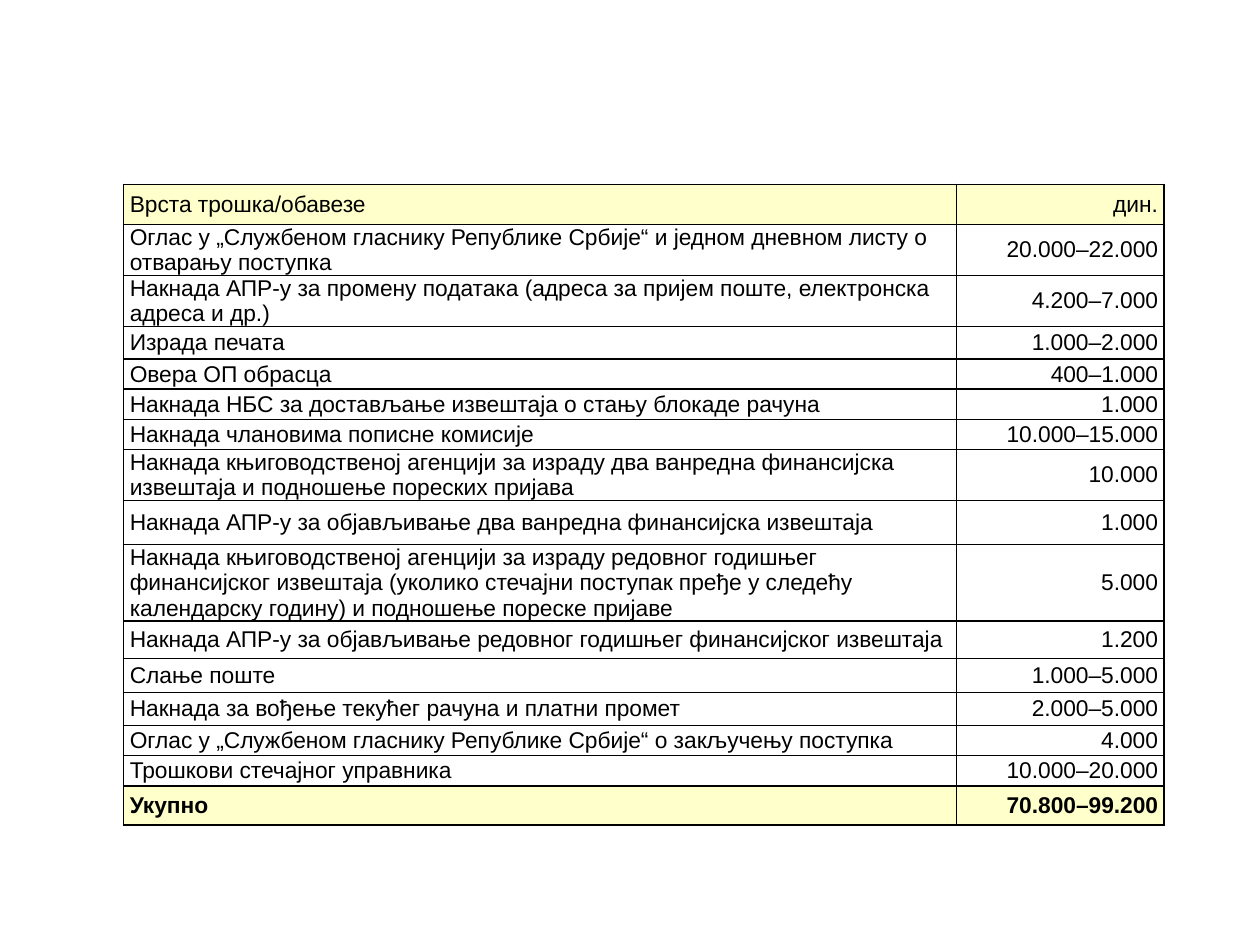
from dataclasses import dataclass, field

from lxml.etree import SubElement
from pptx import Presentation
from pptx.dml.color import RGBColor
from pptx.enum.text import MSO_ANCHOR, PP_ALIGN
from pptx.oxml.ns import qn
from pptx.util import Inches, Pt

COLORS = {"ink": "000000", "band": "FFFFCC", "paper": "FFFFFF"}
COSTS = [
    ("Врста трошка/обавезе", "дин.", 0.32),
    ("Оглас у „Службеном гласнику Републике Србије“ и једном дневном листу о отварању поступка",
     "20.000–22.000", 0.35),
    ("Накнада АПР-у за промену података (адреса за пријем поште, електронска адреса и др.)",
     "4.200–7.000", 0.35),
    ("Израда печата", "1.000–2.000", 0.26),
    ("Овера ОП обрасца", "400–1.000", 0.24),
    ("Накнада НБС за достављање извештаја о стању блокаде рачуна", "1.000", 0.24),
    ("Накнада члановима пописне комисије", "10.000–15.000", 0.24),
    ("Накнада књиговодственој агенцији за израду два ванредна финансијска извештаја "
     "и подношење пореских пријава", "10.000", 0.35),
    ("Накнада АПР-у за објављивање два ванредна финансијска извештаја", "1.000", 0.35),
    ("Накнада књиговодственој агенцији за израду редовног годишњег финансијског извештаја "
     "(уколико стечајни поступак пређе у следећу календарску годину) и подношење пореске пријаве",
     "5.000", 0.52),
    ("Накнада АПР-у за објављивање редовног годишњег финансијског извештаја", "1.200", 0.3),
    ("Слање поште", "1.000–5.000", 0.27),
    ("Накнада за вођење текућег рачуна и платни промет", "2.000–5.000", 0.26),
    ("Оглас у „Службеном гласнику Републике Србије“ о закључењу поступка", "4.000", 0.24),
    ("Трошкови стечајног управника", "10.000–20.000", 0.24),
    ("Укупно", "70.800–99.200", 0.31),
]


@dataclass
class CostSlide:
    """Holds the table style and the slide being built."""

    font: str = "Arial"
    size: float = 13
    aligns: tuple = (PP_ALIGN.LEFT, PP_ALIGN.RIGHT)
    deck: object = field(default_factory=Presentation)

    def start(self, width, height):
        self.deck.slide_width, self.deck.slide_height = Inches(width), Inches(height)
        self.slide = self.deck.slides.add_slide(self.deck.slide_layouts[6])

    def border(self, cell):
        properties = cell._tc.get_or_add_tcPr()
        for side in ("lnL", "lnR", "lnT", "lnB"):
            line = SubElement(properties, qn(f"a:{side}"), w=str(Pt(1)))
            fill = SubElement(line, qn("a:solidFill"))
            SubElement(fill, qn("a:srgbClr"), val=COLORS["ink"])

    def cost_cell(self, cell, text, align, color, bold):
        cell.text = text
        cell.vertical_anchor = MSO_ANCHOR.MIDDLE
        cell.margin_left = cell.margin_right = Inches(0.05)
        cell.margin_top = cell.margin_bottom = 0
        self.border(cell)
        cell.fill.solid()
        cell.fill.fore_color.rgb = RGBColor.from_string(COLORS[color])
        paragraph = cell.text_frame.paragraphs[0]
        paragraph.alignment = align
        font = paragraph.font
        font.name, font.size, font.bold = self.font, Pt(self.size), bold
        font.color.rgb = RGBColor.from_string(COLORS["ink"])

    def cost_table(self, costs, left, top, widths):
        slide_width, slide_height = self.deck.slide_width, self.deck.slide_height
        total_height = sum(height for *_, height in costs)
        table = self.slide.shapes.add_table(
            len(costs), len(widths), int(left * slide_width), int(top * slide_height),
            int(sum(widths) * slide_width), Inches(total_height)).table
        table.first_row = table.horz_banding = False
        for column, width in zip(table.columns, widths):
            column.width = int(width * slide_width)
        last = len(costs) - 1
        for index, (*texts, height) in enumerate(costs):
            table.rows[index].height = Inches(height)
            color = "band" if index in (0, last) else "paper"
            for cell, text, align in zip(table.rows[index].cells, texts, self.aligns):
                self.cost_cell(cell, text, align, color, index == last)


def main():
    page = CostSlide()
    page.start(10, 7.5)
    page.cost_table(COSTS, left=0.098, top=0.195, widths=(0.661, 0.165))
    page.deck.save("out.pptx")


if __name__ == "__main__":
    main()
